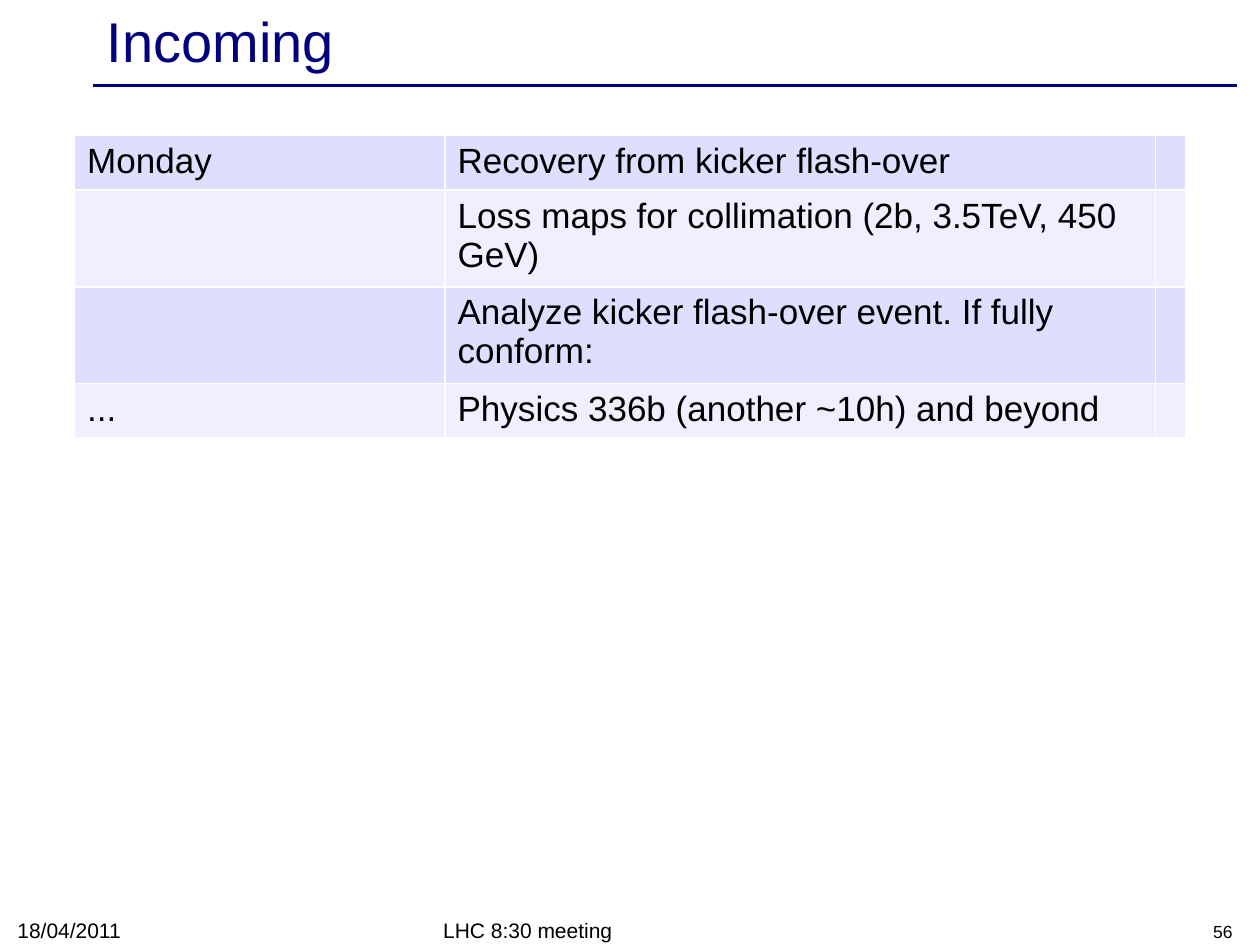
"""Build the Incoming slide: title, rule, plan table and footer."""
import dataclasses
import typing

import lxml.etree
import pptx
import pptx.dml.color
import pptx.enum.shapes
import pptx.enum.text
import pptx.oxml.ns
import pptx.util

Pt = pptx.util.Pt
ALIGN = pptx.enum.text.PP_ALIGN
ANCHOR = pptx.enum.text.MSO_ANCHOR
FONT = "Arial"
NAVY, BLACK, WHITE = "00007D", "000000", "FFFFFF"
BANDS = ("DEDEFF", "EFEFFF")
WIDTHS = (211.7, 406.1, 17.3)
ROW = 29.2
ROWS = (
    ("Monday", "Recovery from kicker flash-over", ""),
    ("", "Loss maps for collimation (2b, 3.5TeV, 450 GeV)", ""),
    ("", "Analyze kicker flash-over event. If fully conform:", ""),
    ("...", "Physics 336b (another ~10h) and beyond", ""),
)


@dataclasses.dataclass
class Label:
    text: str
    left: float
    top: float
    width: float
    height: float
    size: float
    color: str = BLACK
    align: typing.Any = ALIGN.LEFT
    anchor: typing.Any = ANCHOR.BOTTOM


LABELS = (
    Label("Incoming", 54, 2.2, 648, 41, 32, NAVY, anchor=ANCHOR.MIDDLE),
    Label("LHC 8:30 meeting", 246.2, 522, 228.2, 20, 12),
    Label("56", 543.6, 522, 167.8, 20, 10, align=ALIGN.RIGHT),
    Label("18/04/2011", 2.9, 522, 167.8, 20, 12),
)


def paint(target: typing.Any, color: str) -> None:
    target.rgb = pptx.dml.color.RGBColor.from_string(color)


def style(para: typing.Any, size: float, color: str, align: typing.Any) -> None:
    para.alignment = align
    para.font.name = FONT
    para.font.size = Pt(size)
    paint(para.font.color, color)
    for run in para.runs:
        run.font.name = FONT
        run.font.size = Pt(size)
        paint(run.font.color, color)


def add_label(slide: typing.Any, label: Label) -> None:
    box = slide.shapes.add_textbox(
        Pt(label.left), Pt(label.top), Pt(label.width), Pt(label.height))
    frame = box.text_frame
    frame.word_wrap = True
    frame.vertical_anchor = label.anchor
    frame.text = label.text
    style(frame.paragraphs[0], label.size, label.color, label.align)


def add_rule(slide: typing.Any) -> None:
    line = slide.shapes.add_connector(
        pptx.enum.shapes.MSO_CONNECTOR.STRAIGHT,
        Pt(53), Pt(49), Pt(707), Pt(49))
    line.line.width = Pt(2)
    paint(line.line.color, NAVY)
    props = line._element.spPr
    lxml.etree.SubElement(props, pptx.oxml.ns.qn("a:effectLst"))


def add_edges(cell: typing.Any) -> None:
    props = cell._tc.get_or_add_tcPr()
    for spot, side in enumerate(("lnL", "lnR", "lnT", "lnB")):
        edge = lxml.etree.Element(
            pptx.oxml.ns.qn("a:" + side), w=str(Pt(1)))
        fill = lxml.etree.SubElement(edge, pptx.oxml.ns.qn("a:solidFill"))
        lxml.etree.SubElement(fill, pptx.oxml.ns.qn("a:srgbClr"), val=WHITE)
        props.insert(spot, edge)


def add_plan(slide: typing.Any) -> None:
    table = slide.shapes.add_table(
        len(ROWS), len(WIDTHS), Pt(42.6), Pt(77.4),
        Pt(sum(WIDTHS)), Pt(ROW * len(ROWS))).table
    table.first_row = False
    table.horz_banding = False
    for col, width in zip(table.columns, WIDTHS):
        col.width = Pt(width)
    for num, (row, texts) in enumerate(zip(table.rows, ROWS)):
        row.height = Pt(ROW)
        for cell, text in zip(row.cells, texts):
            cell.text_frame.text = text
            style(cell.text_frame.paragraphs[0], 20, BLACK, ALIGN.LEFT)
            cell.fill.solid()
            paint(cell.fill.fore_color, BANDS[num % 2])
            add_edges(cell)


def main() -> None:
    deck = pptx.Presentation()
    deck.slide_width, deck.slide_height = Pt(720), Pt(540)
    slide = deck.slides.add_slide(deck.slide_layouts[6])
    add_rule(slide)
    for label in LABELS:
        add_label(slide, label)
    add_plan(slide)
    deck.save("out.pptx")


if __name__ == "__main__":
    main()
